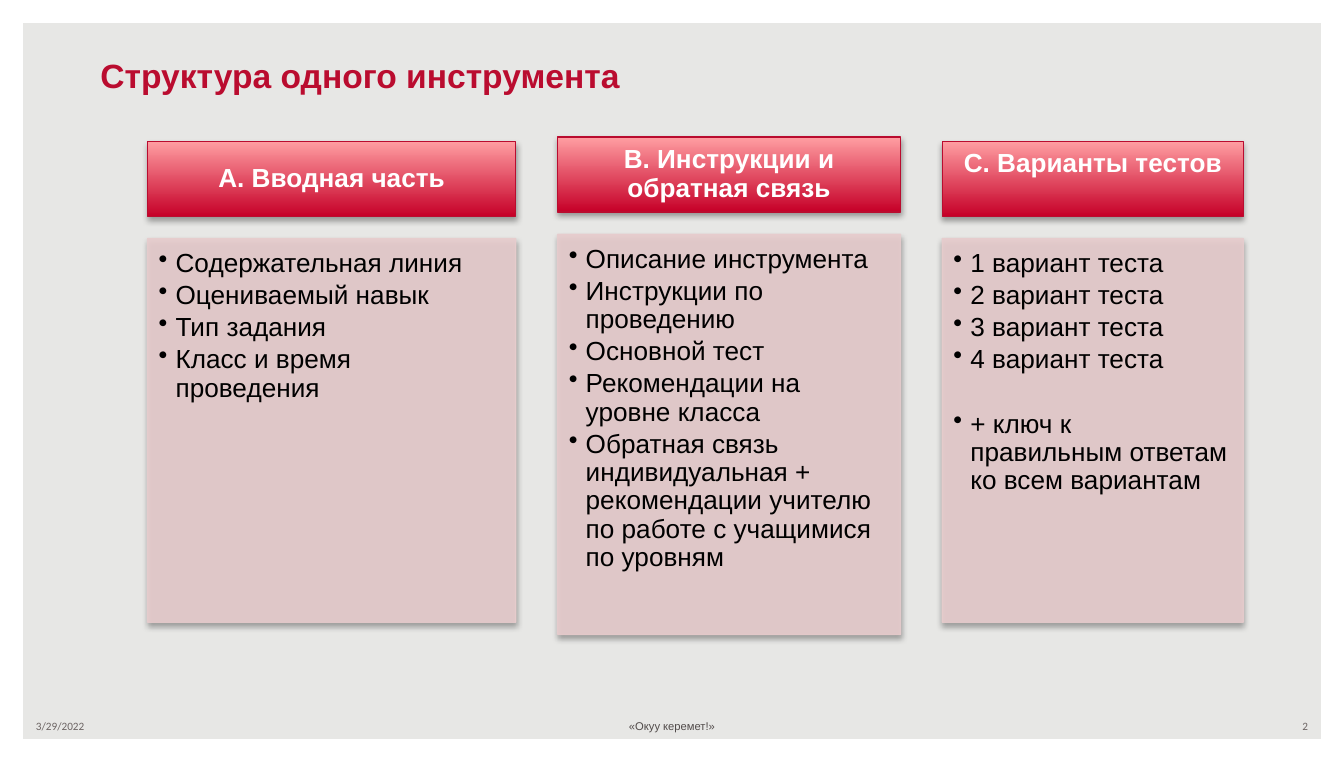
import lxml.etree
import pptx
import pptx.dml.color
import pptx.enum.shapes
import pptx.enum.text
import pptx.oxml.ns
import pptx.util

Cm = pptx.util.Cm
Pt = pptx.util.Pt
RGBColor = pptx.dml.color.RGBColor
ALIGN = pptx.enum.text.PP_ALIGN
ANCHOR = pptx.enum.text.MSO_ANCHOR
SHAPE = pptx.enum.shapes.MSO_SHAPE
qn = pptx.oxml.ns.qn

PAPER = RGBColor(0xE7, 0xE7, 0xE5)
WHITE = RGBColor(0xFF, 0xFF, 0xFF)
BLACK = RGBColor(0, 0, 0)
CRIMSON = RGBColor(0xBA, 0x0C, 0x2F)
DEEP_RED = RGBColor(0xC6, 0x00, 0x28)
LIGHT_RED = RGBColor(0xFF, 0x9E, 0xA2)
PINK = RGBColor(0xE7, 0xCC, 0xCD)
GREY = RGBColor(0x6C, 0x64, 0x63)
DARK_GREY = RGBColor(0x51, 0x4B, 0x4A)

WIDTH, HEIGHT = 25.4, 14.4
COLUMN_GAP = 0.79
HEADING_HEIGHT = 1.42
BODY_OFFSET = 1.84
BULLET_INDENT = 0.32

COLUMNS = [
    (2.67, 6.96, 9.09, "А. Вводная часть", ANCHOR.MIDDLE,
     ["Содержательная линия", "Оцениваемый навык", "Тип задания",
      "Класс и время проведения"]),
    (2.59, 6.48, 9.4, "В. Инструкции и обратная связь", ANCHOR.MIDDLE,
     ["Описание инструмента", "Инструкции по проведению", "Основной тест",
      "Рекомендации на уровне класса",
      "Обратная связь индивидуальная + рекомендации учителю "
      "по работе с учащимися по уровням"]),
    (2.67, 5.69, 9.09, "С. Варианты тестов", ANCHOR.TOP,
     ["1 вариант теста", "2 вариант теста", "3 вариант теста",
      "4 вариант теста", "+ ключ к правильным ответам ко всем вариантам"]),
]


def set_font(para, size, color, name="Arial", bold=False):
    """Style a whole paragraph."""
    para.font.size = Pt(size)
    para.font.name = name
    para.font.bold = bold
    para.font.color.rgb = color


def set_insets(frame, left, top, right, bottom):
    """Set the inner margins of a text frame and let it wrap."""
    frame.word_wrap = True
    frame.margin_left, frame.margin_top = Cm(left), Cm(top)
    frame.margin_right, frame.margin_bottom = Cm(right), Cm(bottom)


def add_block(page, kind, box):
    """Add a preset shape without the theme shadow."""
    block = page.shapes.add_shape(kind, *map(Cm, box))
    block.shadow.inherit = False
    return block


def add_shadow(block):
    """Give a shape a soft shadow below it."""
    effects = block._element.spPr.find(qn("a:effectLst"))
    shadow = lxml.etree.SubElement(effects, qn("a:outerShdw"), blurRad="40000",
                                   dist="23000", dir="5400000", rotWithShape="0")
    color = lxml.etree.SubElement(shadow, qn("a:srgbClr"), val=str(BLACK))
    lxml.etree.SubElement(color, qn("a:alpha"), val="35000")


def add_label(page, box, text, anchor, align, **style):
    """Add one line of text in a box."""
    label = page.shapes.add_textbox(*map(Cm, box))
    label.text_frame.word_wrap = True
    label.text_frame.vertical_anchor = anchor
    para = label.text_frame.paragraphs[0]
    para.text = text
    para.alignment = align
    set_font(para, **style)


def add_heading(page, box, text, anchor):
    """Add the red gradient heading of a column."""
    heading = add_block(page, SHAPE.RECTANGLE, box)
    heading.fill.gradient()
    heading.fill.gradient_angle = 90
    for stop, position, color in zip(heading.fill.gradient_stops, (0, 1),
                                     (DEEP_RED, LIGHT_RED)):
        stop.position = position
        stop.color.rgb = color
    heading.line.color.rgb = CRIMSON
    heading.line.width = Pt(0.75)
    add_shadow(heading)
    frame = heading.text_frame
    set_insets(frame, 0.28, 0.16, 0.28, 0.16)
    frame.vertical_anchor = anchor
    para = frame.paragraphs[0]
    para.text = text
    para.alignment = ALIGN.CENTER
    para.line_spacing = 0.9
    set_font(para, 14, WHITE, bold=True)


def add_body(page, box, items):
    """Add the pink bullet list of a column."""
    body = add_block(page, SHAPE.RECTANGLE, box)
    body.fill.solid()
    body.fill.fore_color.rgb = PINK
    body.line.color.rgb = PINK
    body.line.width = Pt(0.75)
    for color in body._element.spPr.iter(qn("a:srgbClr")):
        lxml.etree.SubElement(color, qn("a:alpha"), val="90000")
    add_shadow(body)
    frame = body.text_frame
    set_insets(frame, 0.21, 0.21, 0.28, 0.31)
    frame.vertical_anchor = ANCHOR.TOP
    for index, item in enumerate(items):
        para = frame.add_paragraph() if index else frame.paragraphs[0]
        para.text = item
        para.alignment = ALIGN.LEFT
        para.line_spacing = 0.9
        para.space_after = Pt(2.1)
        if item.startswith("+"):
            para.space_before = Pt(17.2)
        properties = para._p.get_or_add_pPr()
        properties.set("marL", str(Cm(BULLET_INDENT)))
        properties.set("indent", str(-Cm(BULLET_INDENT)))
        lxml.etree.SubElement(properties, qn("a:buChar"), char="•")
        set_font(para, 14, BLACK)


def add_column(page, box, title, anchor, items):
    """Add a heading with its list below it."""
    left, top, width, height = box
    add_heading(page, (left, top, width, HEADING_HEIGHT), title, anchor)
    add_body(page, (left, top + BODY_OFFSET, width, height - BODY_OFFSET), items)


def add_columns(page, left):
    """Add the columns side by side with equal gaps."""
    for top, width, height, title, anchor, items in COLUMNS:
        add_column(page, (left, top, width, height), title, anchor, items)
        left += width + COLUMN_GAP


def add_border(page, box):
    """Add the white frame around the page."""
    border = add_block(page, SHAPE.FRAME, box)
    border.adjustments[0] = 0.03
    border.fill.solid()
    border.fill.fore_color.rgb = WHITE
    border.line.fill.background()


def add_footer(page, box):
    """Add the date, the project name and the page number."""
    left, top, width, height = box
    side, middle = 5.92, 8.05
    add_label(page, (left, top, side, height), "3/29/2022", ANCHOR.MIDDLE,
              ALIGN.LEFT, size=6, color=GREY, name="Calibri")
    add_label(page, (left + (width - middle) / 2, top, middle, height),
              "«Окуу керемет!»", ANCHOR.MIDDLE, ALIGN.CENTER,
              size=6, color=DARK_GREY)
    add_label(page, (left + width - side, top, side, height), "2", ANCHOR.MIDDLE,
              ALIGN.RIGHT, size=6, color=GREY, name="Calibri")


def main():
    """Build the deck and save it."""
    deck = pptx.Presentation()
    deck.slide_width, deck.slide_height = Cm(WIDTH), Cm(HEIGHT)
    page = deck.slides.add_slide(deck.slide_layouts[6])
    page.background.fill.solid()
    page.background.fill.fore_color.rgb = PAPER
    add_border(page, (0, 0, WIDTH, HEIGHT))
    add_footer(page, (0.43, 13.46, 24.54, 0.51))
    add_label(page, (1.65, 0.91, 21.62, 1.02), "Структура одного инструмента",
              ANCHOR.TOP, ALIGN.LEFT, size=18, color=CRIMSON, bold=True)
    add_columns(page, 2.79)
    deck.save("out.pptx")


if __name__ == "__main__":
    main()
